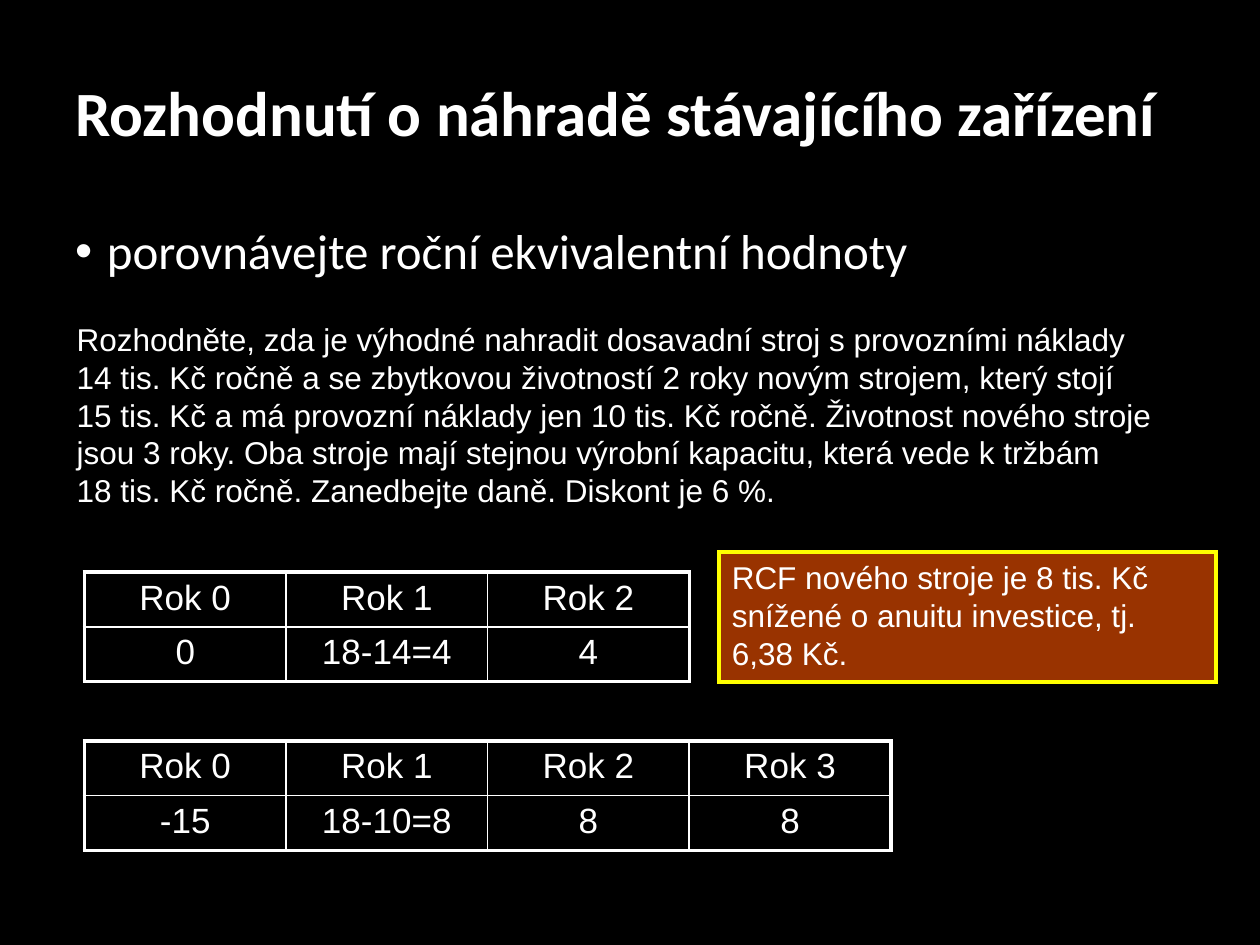
from lxml.etree import SubElement
from pptx import Presentation
from pptx.dml.color import RGBColor
from pptx.enum.shapes import MSO_SHAPE
from pptx.enum.text import MSO_ANCHOR, PP_ALIGN
from pptx.oxml.ns import qn
from pptx.util import Inches, Pt

COLORS = {
    "background": "000000",
    "text": "FFFFFF",
    "grid": "FFFFFF",
    "result_fill": "993300",
    "result_line": "FFFF00",
}
OUTER_BORDER, INNER_BORDER = Pt(2.25), Pt(1)
COLUMN_WIDTH, TABLE_HEIGHT = 1.6, 0.87
NO_BREAK_SPACE = chr(160)


def rgb(name):
    return RGBColor.from_string(COLORS[name])


def write_text(frame, text, size=18, font="Arial", bold=False,
               align=PP_ALIGN.LEFT, anchor=MSO_ANCHOR.TOP, line_spacing=None):
    frame.word_wrap = True
    frame.vertical_anchor = anchor
    paragraph = frame.paragraphs[0]
    paragraph.alignment = align
    paragraph.line_spacing = line_spacing
    run = paragraph.add_run()
    run.text = text
    run.font.size = Pt(size)
    run.font.name = font
    run.font.bold = bold
    run.font.color.rgb = rgb("text")
    return paragraph


def add_text(slide, box, text, **text_format):
    textbox = slide.shapes.add_textbox(*map(Inches, box))
    return write_text(textbox.text_frame, text, **text_format)


def add_heading(slide, box, text):
    add_text(slide, box, text, size=36, font="Calibri", bold=True,
             anchor=MSO_ANCHOR.MIDDLE, line_spacing=0.9)


def add_bullet(slide, box, text):
    paragraph = add_text(slide, box, text, size=28, font="Calibri",
                         line_spacing=0.9)
    properties = paragraph._p.get_or_add_pPr()
    properties.set("marL", str(Inches(0.25)))
    properties.set("indent", str(-Inches(0.25)))
    SubElement(properties, qn("a:buFont"), typeface="Arial")
    SubElement(properties, qn("a:buChar"), char="•")


def set_borders(cell, widths):
    """Draw the left, right, top and bottom borders in the given widths."""
    properties = cell._tc.get_or_add_tcPr()
    for index, (side, width) in enumerate(zip("LRTB", widths)):
        border = SubElement(properties, qn(f"a:ln{side}"), w=str(width))
        fill = SubElement(border, qn("a:solidFill"))
        SubElement(fill, qn("a:srgbClr"), val=COLORS["grid"])
        properties.insert(index, border)


def add_cash_flow(slide, left, top, flows):
    """Add a table with one column for each year, starting at year 0."""
    rows = [[f"Rok {year}" for year in range(len(flows))], flows]
    last_row, last_column = len(rows) - 1, len(flows) - 1
    box = (left, top, COLUMN_WIDTH * len(flows), TABLE_HEIGHT)
    table = slide.shapes.add_table(len(rows), len(flows),
                                   *map(Inches, box)).table
    table.first_row = table.horz_banding = False
    for r, values in enumerate(rows):
        for c, value in enumerate(values):
            cell = table.cell(r, c)
            cell.fill.background()
            write_text(cell.text_frame, value, size=20, align=PP_ALIGN.CENTER)
            on_edge = (c == 0, c == last_column, r == 0, r == last_row)
            set_borders(cell, [OUTER_BORDER if edge else INNER_BORDER
                               for edge in on_edge])


def add_result(slide, box, text):
    result = slide.shapes.add_shape(MSO_SHAPE.RECTANGLE, *map(Inches, box))
    result.shadow.inherit = False
    result.fill.solid()
    result.fill.fore_color.rgb = rgb("result_fill")
    result.line.color.rgb = rgb("result_line")
    result.line.width = Pt(2.25)
    outline = result._element.spPr.find(qn("a:ln"))
    SubElement(outline, qn("a:miter"), lim="800000")
    write_text(result.text_frame, text)


def main():
    presentation = Presentation()
    presentation.slide_width = Inches(10)
    presentation.slide_height = Inches(7.5)
    slide = presentation.slides.add_slide(presentation.slide_layouts[6])
    slide.background.fill.solid()
    slide.background.fill.fore_color.rgb = rgb("background")

    add_heading(slide, (0.5, 0.3, 9, 1.25),
                "Rozhodnutí o náhradě stávajícího zařízení")
    add_bullet(slide, (0.5, 1.75, 8.67, 0.58),
               "porovnávejte roční ekvivalentní hodnoty")
    thousands = f"{NO_BREAK_SPACE}tis."
    add_text(slide, (0.51, 2.49, 8.98, 1.6),
             "Rozhodněte, zda je výhodné nahradit dosavadní stroj s provozními "
             f"náklady 14{thousands} Kč ročně a se zbytkovou životností 2 roky "
             f"novým strojem, který stojí 15{thousands} Kč a má provozní "
             "náklady jen 10 tis. Kč ročně. Životnost nového stroje jsou "
             "3 roky. Oba stroje mají stejnou výrobní kapacitu, která vede "
             f"k tržbám 18{thousands} Kč ročně. Zanedbejte daně. "
             "Diskont je 6 %.")
    add_cash_flow(slide, 0.67, 4.54, ["0", "18-14=4", "4"])
    add_cash_flow(slide, 0.67, 5.88, ["-15", "18-10=8", "8", "8"])
    add_result(slide, (5.71, 4.38, 3.94, 1.03),
               "RCF nového stroje je 8 tis. Kč snížené o anuitu investice, "
               "tj. 6,38 Kč.")
    presentation.save("out.pptx")


if __name__ == "__main__":
    main()
